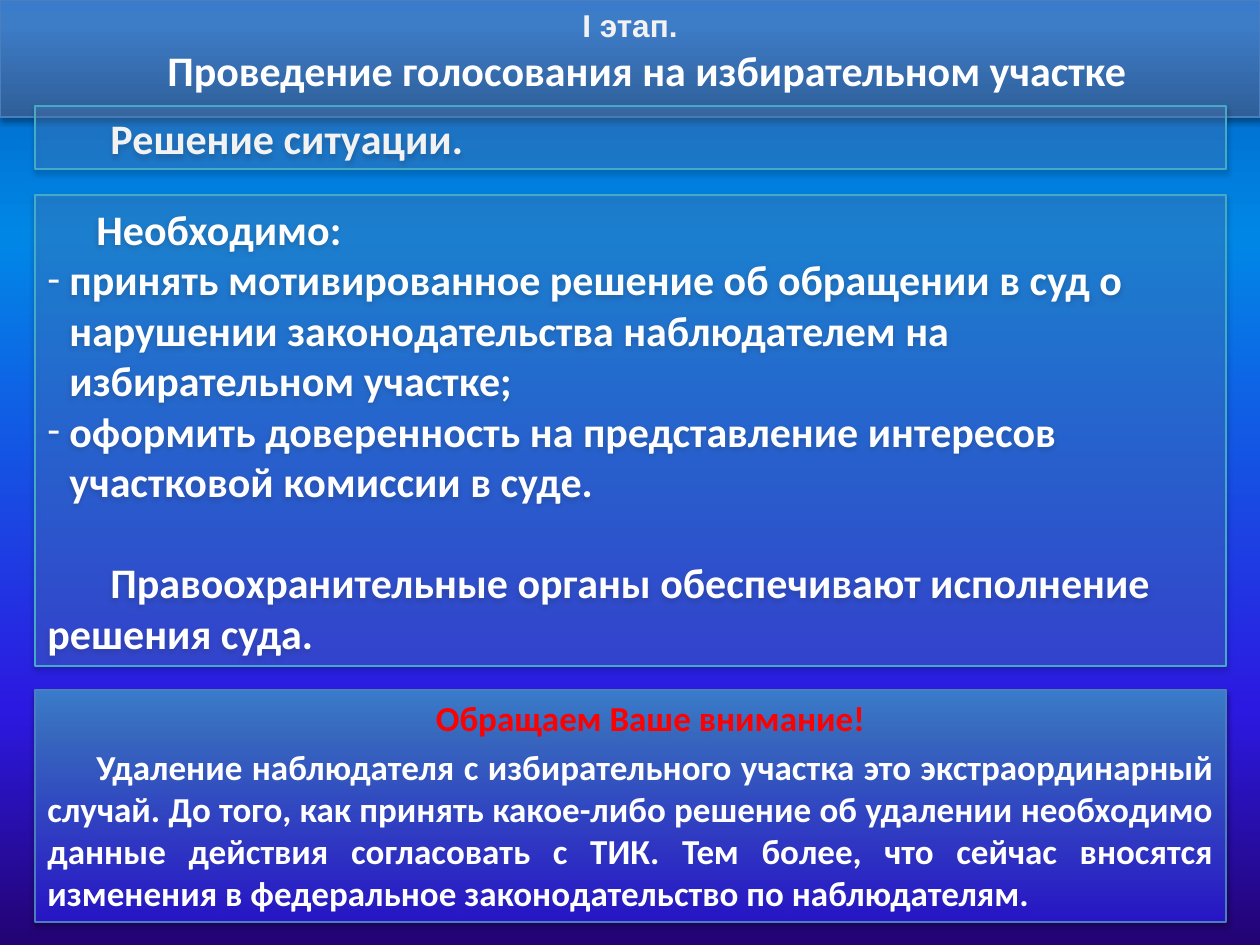
"""Build the slide on resolving a polling-station situation."""
from dataclasses import dataclass

from lxml.etree import SubElement as Sub
from pptx import Presentation
from pptx.dml.color import RGBColor as Rgb
from pptx.enum.shapes import MSO_SHAPE as Kind
from pptx.enum.text import MSO_ANCHOR as Anchor, MSO_AUTO_SIZE as Auto, PP_ALIGN as Align
from pptx.oxml.ns import qn
from pptx.util import Pt


@dataclass(frozen=True)
class Theme:
    """Colours, gradient stops (position, colour, opacity), fonts and sizes."""
    white: str = "FFFFFF"
    pale: str = "F2F2F2"
    red: str = "FF0000"
    edge: str = "4B7EBC"
    aqua: str = "46AAC5"
    glass: tuple = ("558ED5", 33)
    back: tuple = ((0, "230373", 100), (25, "2C19E1", 100),
                   (75, "0087E6", 100), (100, "005CBF", 100))
    head: tuple = ((0, "2F5F99", 100), (80, "3D7CC7", 100), (100, "3A7CCB", 100))
    note: tuple = ((0, "2C19E1", 78), (80, "3D7CC7", 81), (100, "3A7CCB", 100))
    font: str = "Calibri"
    top: str = "Arial"
    big: int = 24
    mid: int = 20
    small: int = 18


T = Theme()


def px(n):
    """Turn px into EMU at 126 px to the inch."""
    return round(n * 914400 / 126)


def tint(node, code, alpha):
    """Add a colour with its opacity in percent."""
    clr = Sub(node, qn("a:srgbClr"), val=code)
    Sub(clr, qn("a:alpha"), val=str(alpha * 1000))


def blend(node, stops):
    """Swap the solid fill of a node for an upward gradient."""
    old = node.find(qn("a:solidFill"))
    grad = old.makeelement(qn("a:gradFill"), {"rotWithShape": "1"})
    node.replace(old, grad)
    row = Sub(grad, qn("a:gsLst"))
    for pos, code, alpha in stops:
        tint(Sub(row, qn("a:gs"), pos=str(pos * 1000)), code, alpha)
    Sub(grad, qn("a:lin"), ang="16200000", scaled="0")


def veil(node, code, alpha):
    """Make the solid fill of a node see-through."""
    fill = node.find(qn("a:solidFill"))
    fill.clear()
    tint(fill, code, alpha)


def shade(shape):
    """Give a shape a soft shadow below it."""
    shape.shadow.inherit = False
    fx = shape._element.spPr.find(qn("a:effectLst"))
    drop = Sub(fx, qn("a:outerShdw"), blurRad="40000", dist="23000",
               dir="5400000", rotWithShape="0")
    tint(drop, "000000", 35)


def dress(shape, box, edge, anchor=Anchor.TOP):
    """Place a shape and set its line, shadow and text frame."""
    shape.left, shape.top, shape.width, shape.height = map(px, box)
    shape.fill.solid()
    shape.line.color.rgb = Rgb.from_string(edge)
    shape.line.width = Pt(0.75)
    shade(shape)
    frame = shape.text_frame
    frame.word_wrap = True
    frame.auto_size = Auto.NONE
    frame.vertical_anchor = anchor


def panel(slide, box, edge, anchor=Anchor.TOP):
    """Add a dressed rectangle."""
    shape = slide.shapes.add_shape(Kind.RECTANGLE, *map(px, box))
    dress(shape, box, edge, anchor)
    return shape


def style(para, size=T.big, color=T.white, font=T.font, align=Align.LEFT,
          first=0, left=0, gap=(0, 0), mark=None):
    """Format a paragraph and its runs."""
    para.alignment = align
    para.space_before, para.space_after = map(Pt, gap)
    prop = para._p.get_or_add_pPr()
    prop.set("marL", str(px(left)))
    prop.set("indent", str(px(first)))
    if mark:
        Sub(prop, qn("a:buFont"), typeface=font)
        Sub(prop, qn("a:buChar"), char=mark)
    for run in para.runs:
        run.font.size, run.font.name, run.font.bold = Pt(size), font, True
        run.font.color.rgb = Rgb.from_string(color)


def write(shape, rows):
    """Fill a shape with (text, style) rows."""
    frame = shape.text_frame
    frame.text = "\n".join(text for text, _ in rows)
    for para, (_, look) in zip(frame.paragraphs, rows):
        style(para, **look)


def main():
    """Build and save the slide."""
    deck = Presentation()
    deck.slide_width, deck.slide_height = px(1260), px(945)
    slide = deck.slides.add_slide(deck.slide_layouts[5])
    slide.background.fill.solid()
    blend(slide.element.find(".//" + qn("p:bgPr")), T.back)

    head = slide.shapes.title
    dress(head, (0, 0, 1260, 117), T.edge)
    blend(head._element.spPr, T.head)
    write(head, [
        ("I\u00a0этап.", dict(size=T.small, color=T.pale, font=T.top, align=Align.CENTER)),
        ("Проведение голосования на избирательном участке",
         dict(align=Align.CENTER, first=34)),
    ])

    item = dict(left=22, first=-22, mark="-")
    steps = panel(slide, (35, 195, 1191, 471), T.aqua, Anchor.MIDDLE)
    veil(steps._element.spPr, *T.glass)
    write(steps, [
        ("Необходимо:", dict(first=49, gap=(6, 0))),
        ("принять мотивированное решение об обращении в суд о нарушении "
         "законодательства наблюдателем на избирательном участке;", item),
        ("оформить доверенность на представление интересов "
         "участковой комиссии в суде.", item),
        ("Правоохранительные органы обеспечивают исполнение решения суда.",
         dict(first=63, gap=(29, 0))),
    ])

    case = panel(slide, (35, 106, 1191, 63), T.aqua, Anchor.MIDDLE)
    veil(case._element.spPr, *T.glass)
    write(case, [("Решение ситуации.",
                  dict(color=T.pale, align=Align.JUSTIFY, first=63))])

    note = panel(slide, (35, 690, 1191, 232), T.edge)
    blend(note._element.spPr, T.note)
    base = dict(size=T.mid, gap=(2, 2))
    write(note, [
        ("Обращаем Ваше внимание!",
         dict(base, color=T.red, align=Align.CENTER, first=40)),
        ("Удаление наблюдателя с избирательного участка это экстраординарный "
         "случай. До того, как принять какое-либо решение об удалении необходимо "
         "данные действия согласовать с ТИК. Тем более, что сейчас вносятся "
         "изменения в федеральное законодательство по наблюдателям.",
         dict(base, align=Align.JUSTIFY, first=49)),
    ])
    deck.save("out.pptx")


if __name__ == "__main__":
    main()
